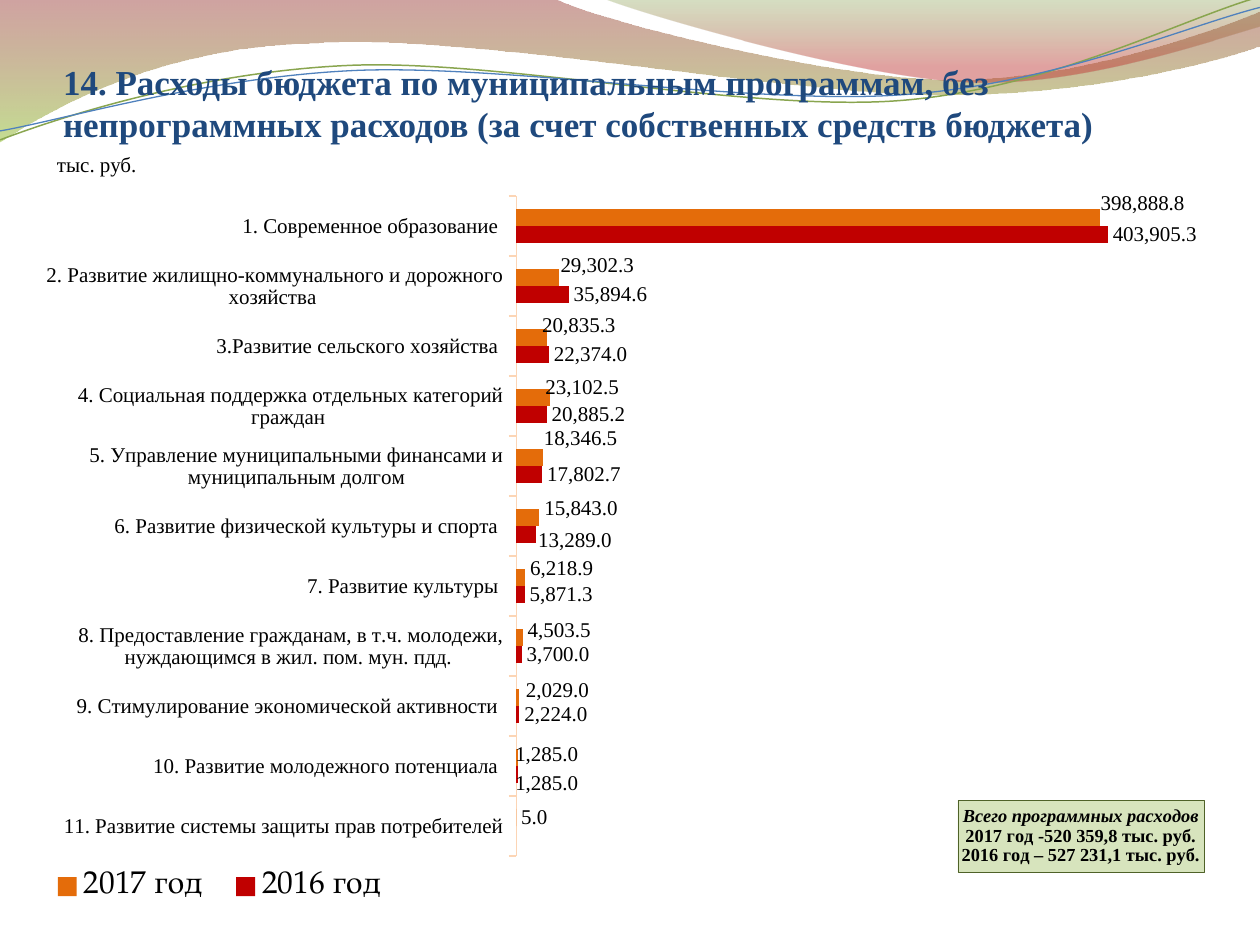
import math
from dataclasses import dataclass
from typing import Optional

from lxml import etree
from pptx import Presentation
from pptx import util as u
from pptx.chart.data import CategoryChartData
from pptx.dml.color import RGBColor
from pptx.enum import chart as ch, text as tx
from pptx.oxml import ns, parse_xml

RED = RGBColor(0xC0, 0x00, 0x00)
ORANGE = RGBColor(0xE4, 0x6C, 0x0A)
PEACH = RGBColor(0xFC, 0xD5, 0xB5)
NAVY = RGBColor(0x1F, 0x49, 0x7D)
BLACK = RGBColor(0, 0, 0)
SAGE = RGBColor(0xD7, 0xE4, 0xBD)
MOSS = RGBColor(0x4F, 0x62, 0x28)
GREEN = RGBColor(0x89, 0xA5, 0x4F)
BLUE = RGBColor(0x4F, 0x81, 0xBD)
SERIF = "Times New Roman"
BOOK = "TeX Gyre Pagella"
FORMAT = "#,##0.0"
TILT = 2.7
PIVOT = (12.7, 1.48)


@dataclass
class Stop:
    place: float
    color: RGBColor
    alpha: int


@dataclass
class Wave:
    start: tuple
    steps: list
    stops: tuple = ()
    line: Optional[RGBColor] = None
    width: float = 0.75


@dataclass
class Year:
    name: str
    color: RGBColor
    vals: tuple
    shifts: dict


WAVES = [
    Wave((0, 0), [
        (11.18, -0.03),
        (12.09, 0.43, 16.87, 1.6, 19.25, 1.6),
        (21.67, 1.6, 24.33, 0.66, 25.4, 0.23),
        (25.43, 0.91),
        (24.97, 1.12, 22.1, 1.93, 18.95, 1.91),
        (15.8, 1.91, 9.7, 0.71, 6.53, 0.86),
        (3.28, 0.91, 1.17, 2.11, -0.03, 2.87),
    ], (Stop(0, RGBColor(0x97, 0x33, 0x30), 45), Stop(1, RGBColor(0x95, 0xC2, 0x38), 55))),
    Wave((12.17, -0.03), [
        (12.93, 0.28, 17.32, 1.57, 19.53, 1.65),
        (21.74, 1.75, 24.41, 0.81, 25.4, 0.53),
        (25.4, 0),
    ], (Stop(0, RGBColor(0x76, 0x95, 0x37), 30), Stop(0.8, RGBColor(0xBE, 0x33, 0x30), 45))),
    Wave((0, 2.82), [
        (1.22, 2.36, 4.01, 1.45, 7.04, 1.32),
        (10.03, 1.19, 15.06, 2.26, 18.11, 2.03),
        (21.16, 1.8, 23.83, 0.38, 25.35, -0.05),
    ], line=GREEN, width=0.85),
    Wave((0, 2.64), [
        (1.19, 2.44, 4.17, 1.55, 7.19, 1.42),
        (10.24, 1.3, 15.16, 2.13, 18.21, 1.91),
        (21.23, 1.7, 23.9, 0.53, 25.4, 0.15),
    ], line=BLUE),
]

CATS = (
    "11. Развитие системы защиты прав потребителей",
    "10. Развитие молодежного потенциала ",
    "9. Стимулирование экономической активности ",
    "8. Предоставление гражданам, в т.ч. молодежи, нуждающимся в жил. пом. мун. пдд. ",
    "7. Развитие культуры ",
    "6. Развитие физической культуры и спорта ",
    "5. Управление муниципальными финансами и муниципальным долгом",
    "4. Социальная поддержка отдельных категорий граждан ",
    "3.Развитие сельского хозяйства ",
    "2. Развитие жилищно-коммунального и дорожного хозяйства ",
    "1. Современное образование ",
)
YEARS = [
    Year("2016 год", RED,
         (None, 1285, 2224, 3700, 5871.3, 13289, 17802.7, 20885.2, 22374, 35894.6, 403905.3),
         {1: (-0.65, 1.2), 5: (-0.2, 0.8)}),
    Year("2017 год", ORANGE,
         (5, 1285, 2029, 4503.5, 6218.9, 15843, 18346.5, 23102.5, 20835.3, 29302.3, 398888.8),
         {1: (-0.65, -0.4), 2: (0.15, -0.95), 3: (0, -0.95), 4: (0, -1.2),
          5: (0, -1.2), 6: (-0.35, -2.55), 7: (-0.8, -1.35), 8: (-0.8, -1.6),
          9: (-0.3, -1.6), 10: (-0.4, -1.9)}),
]
TOTALS = ("Всего программных расходов", "2017 год -520 359,8 тыс. руб.",
          "2016 год – 527 231,1 тыс. руб.")


def style(font, size: float, name: str = SERIF, color: RGBColor = BLACK, bold: bool = False) -> None:
    font.size, font.name, font.bold = u.Pt(size), name, bold
    font.color.rgb = color


def spin(x: float, y: float, angle: float) -> tuple:
    turn = math.radians(angle)
    dx, dy = x - PIVOT[0], y - PIVOT[1]
    return (u.Cm(PIVOT[0] + dx * math.cos(turn) - dy * math.sin(turn)),
            u.Cm(PIVOT[1] + dx * math.sin(turn) + dy * math.cos(turn)))


def bend(shape, curves: list) -> None:
    lines = list(shape.element.iter(ns.qn("a:lnTo")))
    for line, dots in zip(lines, curves):
        if len(dots) == 1:
            continue
        curve = etree.Element(ns.qn("a:cubicBezTo"))
        for x, y in dots:
            dot = etree.SubElement(curve, ns.qn("a:pt"))
            dot.set("x", str(x - shape.left))
            dot.set("y", str(y - shape.top))
        line.getparent().replace(line, curve)


def draw_wave(slide, wave: Wave) -> None:
    angle = TILT if wave.line else 0
    curves = [[spin(x, y, angle) for x, y in zip(step[::2], step[1::2])] for step in wave.steps]
    pen = slide.shapes.build_freeform(*spin(*wave.start, angle))
    pen.add_line_segments([dots[-1] for dots in curves], close=bool(wave.stops))
    shape = pen.convert_to_shape()
    bend(shape, curves)
    shape.shadow.inherit = False
    if wave.line:
        shape.rotation = 360 - TILT
        shape.fill.background()
        shape.line.color.rgb = wave.line
        shape.line.width = u.Pt(wave.width)
        return
    shape.fill.gradient()
    shape.fill.gradient_angle = 270
    for stop, part in zip(wave.stops, shape.fill.gradient_stops):
        part.position = stop.place
        part.color.rgb = stop.color
    for stop, tint in zip(wave.stops, shape.element.iter(ns.qn("a:srgbClr"))):
        etree.SubElement(tint, ns.qn("a:alpha")).set("val", str(stop.alpha * 1000))
    shape.line.fill.background()


def layout(inner: bool = False, mode: str = "edge", **spots: float):
    target = '<c:layoutTarget val="inner"/>' if inner else ""
    modes = "".join(f'<c:{k}Mode val="{mode}"/>' for k in spots if k in "xy")
    sizes = "".join(f'<c:{k} val="{v}"/>' for k, v in spots.items())
    return parse_xml(f'<c:layout {ns.nsdecls("c")}><c:manualLayout>{target}{modes}{sizes}'
                     "</c:manualLayout></c:layout>")


def place(node, after: str, box) -> None:
    for old in node.findall(ns.qn("c:layout")):
        node.remove(old)
    if after:
        node.find(ns.qn(after)).addnext(box)
    else:
        node.insert(0, box)


def draw_bars(series, year: Year) -> None:
    series.format.fill.solid()
    series.format.fill.fore_color.rgb = year.color
    series.invert_if_negative = False
    tags = series.data_labels
    tags.show_value = True
    tags.number_format, tags.number_format_is_linked = FORMAT, False
    tags.position = ch.XL_LABEL_POSITION.OUTSIDE_END
    style(tags.font, 12)
    for i in year.shifts:
        tag = series.points[i].data_label
        style(tag.font, 12)
        tag.position = ch.XL_LABEL_POSITION.OUTSIDE_END
    for node, (x, y) in zip(series._element.iter(ns.qn("c:dLbl")), year.shifts.values()):
        place(node, "c:idx", layout(mode="factor", x=x / 100, y=y / 100))


def draw_total(axis) -> None:
    title = axis.axis_title
    frame = title.text_frame
    for i, line in enumerate(TOTALS):
        para = frame.paragraphs[0] if i == 0 else frame.add_paragraph()
        run = para.add_run()
        run.text = line
        style(run.font, 10.5, bold=True)
        run.font.italic = i == 0
    title.format.fill.solid()
    title.format.fill.fore_color.rgb = SAGE
    title.format.line.color.rgb = MOSS
    title.format.line.width = u.Pt(0.25)
    place(title._element, "c:tx", layout(x=0.775, y=0.841))


def draw_chart(slide) -> None:
    data = CategoryChartData(number_format=FORMAT)
    data.categories = CATS
    for year in YEARS:
        data.add_series(year.name, year.vals)
    chart = slide.shapes.add_chart(ch.XL_CHART_TYPE.BAR_CLUSTERED, u.Cm(0.71), u.Cm(3.52),
                                   u.Cm(24), u.Cm(15), data).chart
    style(chart.font, 18, BOOK)
    chart.has_title = False
    plot = chart.plots[0]
    plot.gap_width, plot.overlap, plot.vary_by_categories = 150, 0, False
    for series, year in zip(plot.series, YEARS):
        draw_bars(series, year)
    cat, val = chart.category_axis, chart.value_axis
    cat.major_tick_mark = ch.XL_TICK_MARK.OUTSIDE
    cat.minor_tick_mark = ch.XL_TICK_MARK.NONE
    style(cat.tick_labels.font, 12)
    cat.format.line.color.rgb = PEACH
    cat.format.line.width = u.Pt(0.75)
    val.minimum_scale, val.maximum_scale = 1, 403910
    val.has_major_gridlines = False
    val.tick_label_position = ch.XL_TICK_LABEL_POSITION.NONE
    val.format.line.fill.background()
    draw_total(val)
    chart.has_legend = True
    chart.legend.position = ch.XL_LEGEND_POSITION.BOTTOM
    chart.legend.include_in_layout = False
    style(chart.legend.font, 18, BOOK)
    place(chart.legend._element, "c:legendPos", layout(x=0, y=0.917, w=0.31, h=0.08))
    area = chart._chartSpace.find(".//" + ns.qn("c:plotArea"))
    place(area, "", layout(True, x=0.404, y=0.029, w=0.497, h=0.887))


def draw_title(slide) -> None:
    title = slide.shapes.title
    title.left, title.top, title.width, title.height = u.Cm(1.27), u.Cm(1.12), u.Cm(22.86), u.Cm(1.8)
    frame = title.text_frame
    frame.text = ("14. Расходы бюджета по муниципальным программам, без непрограммных "
                  "расходов (за счет собственных средств бюджета)")
    frame.auto_size = tx.MSO_AUTO_SIZE.NONE
    frame.vertical_anchor = tx.MSO_ANCHOR.BOTTOM
    frame.margin_left = frame.margin_right = frame.margin_bottom = 0
    frame.paragraphs[0].alignment = tx.PP_ALIGN.LEFT
    style(frame.paragraphs[0].runs[0].font, 20, color=NAVY, bold=True)
    title.element.getparent().append(title.element)


def draw_unit(slide) -> None:
    frame = slide.shapes.add_textbox(u.Cm(0.9), u.Cm(2.93), u.Cm(2.21), u.Cm(0.76)).text_frame
    frame.word_wrap = False
    frame.text = "тыс. руб."
    style(frame.paragraphs[0].runs[0].font, 12)


def main() -> None:
    deck = Presentation()
    deck.slide_width, deck.slide_height = u.Cm(25.4), u.Cm(19.05)
    slide = deck.slides.add_slide(deck.slide_layouts[5])
    for wave in WAVES:
        draw_wave(slide, wave)
    draw_title(slide)
    draw_chart(slide)
    draw_unit(slide)
    deck.save("out.pptx")


if __name__ == "__main__":
    main()
